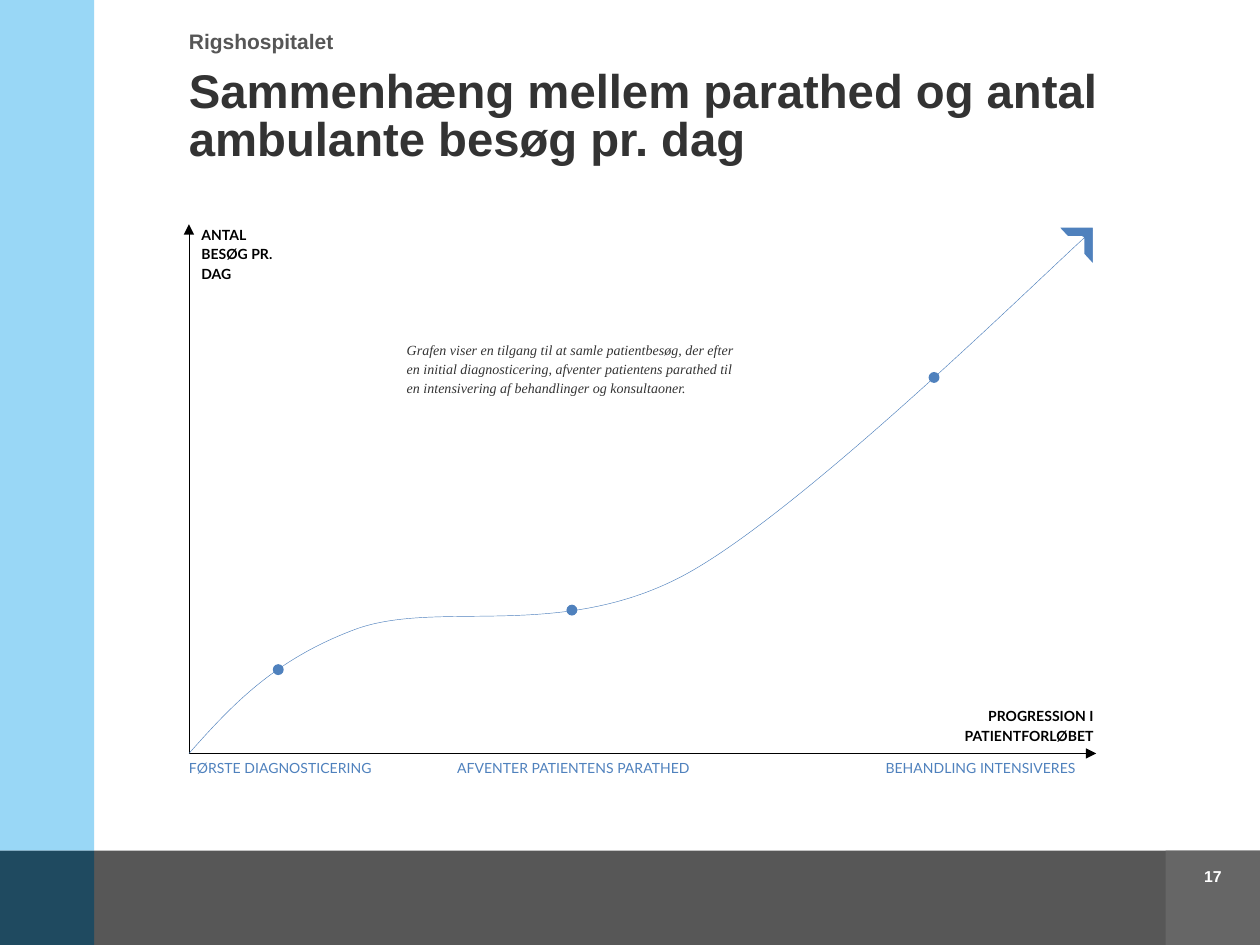
from lxml.etree import SubElement
from pptx import Presentation
from pptx.dml.color import RGBColor
from pptx.enum.shapes import MSO_SHAPE
from pptx.enum.text import MSO_ANCHOR, PP_ALIGN
from pptx.oxml.ns import qn
from pptx.util import Cm, Pt

COLORS = {
    "sky": "99D7F6", "navy": "1F4A60", "dark": "575757", "grey": "666666",
    "head": "565656", "ink": "333333", "blue": "4F81BD",
    "black": "000000", "white": "FFFFFF",
}
RGB = {name: RGBColor.from_string(code) for name, code in COLORS.items()}
LEFT, CENTER, RIGHT = PP_ALIGN.LEFT, PP_ALIGN.CENTER, PP_ALIGN.RIGHT

prs = Presentation()
prs.slide_width, prs.slide_height = Cm(25.4), Cm(19.05)
slide = prs.slides.add_slide(prs.slide_layouts[6])
shapes = slide.shapes


def add_box(kind, box, fill):
    shape = shapes.add_shape(kind, *map(Cm, box))
    shape.shadow.inherit = False
    shape.fill.solid()
    shape.fill.fore_color.rgb = RGB[fill]
    shape.line.fill.background()
    return shape


def add_text(box, text, font, size, color, bold=False, align=LEFT, space=1.0):
    label = shapes.add_textbox(*map(Cm, box))
    frame = label.text_frame
    frame.word_wrap = True
    frame.margin_left = frame.margin_right = 0
    frame.margin_top = frame.margin_bottom = 0
    para = frame.paragraphs[0]
    para.text = text
    para.alignment, para.line_spacing = align, space
    para.font.name, para.font.size = font, Pt(size)
    para.font.bold, para.font.color.rgb = bold, RGB[color]
    return frame


# Side and bottom bands
for box, fill in [
    ((1.9, 17.15, 23.5, 1.9), "dark"),
    ((23.5, 17.15, 1.9, 1.9), "grey"),
    ((0, 0, 1.9, 17.15), "sky"),
    ((0, 17.15, 1.9, 1.9), "navy"),
]:
    add_box(MSO_SHAPE.RECTANGLE, box, fill)

# Header, title and page number
add_text((3.81, 0.58, 6.5, 0.61), "Rigshospitalet", "Arial", 12, "head", True)
title = add_text((3.81, 1.32, 19.71, 2.03),
                 "Sammenhæng mellem parathed og antal ambulante besøg pr. dag",
                 "Arial", 27, "ink", True, space=0.85)
title.vertical_anchor = MSO_ANCHOR.BOTTOM
add_text((23.5, 17.48, 1.9, 0.41), "17", "Arial", 9, "white", True, CENTER)

# Corner at the end of the curve
corner = add_box(MSO_SHAPE.HALF_FRAME, (21.21, 4.57, 0.91, 0.84), "blue")
corner.rotation = 90
corner.line.color.rgb = RGB["white"]
corner.line.width = Pt(3)

# Axes and curve; the curve's points are Bézier controls
axis = [(3.81, 4.52), (3.81, 15.19), (22.1, 15.19)]
bends = [
    (3.81, 15.19),
    (4.67, 14.22), (5.54, 13.28), (7.21, 12.67),
    (8.89, 12.09), (11.33, 12.93), (13.82, 11.58),
    (16.28, 10.24), (21.18, 5.38), (22.02, 4.65),
]
lines = []
for points, color in [(axis, "black"), (bends, "blue")]:
    start, *rest = [(Cm(x), Cm(y)) for x, y in points]
    pen = shapes.build_freeform(*start)
    pen.add_line_segments(rest, close=False)
    line = pen.convert_to_shape()
    line.shadow.inherit = False
    line.fill.background()
    line.line.color.rgb = RGB[color]
    line.line.width = Pt(0.25)
    lines.append(line)
axes, curve = lines

# Arrowheads at both ends of the axes
stroke = axes.line._get_or_add_ln()
for tag in ("a:headEnd", "a:tailEnd"):
    SubElement(stroke, qn(tag), type="triangle")

# Turn each three line steps of the curve into one cubic step
track = next(curve._element.iter(qn("a:path")))
steps = track.findall(qn("a:lnTo"))
for i in range(0, len(steps), 3):
    cubic = SubElement(track, qn("a:cubicBezTo"))
    for step in steps[i:i + 3]:
        cubic.append(step[0])
        track.remove(step)

# Axis titles and phase labels
for box, text, color, bold, align in [
    ((4.06, 4.52, 1.5, 1.24), "ANTAL BESØG PR. DAG", "black", True, LEFT),
    ((18.75, 14.22, 3.3, 0.84), "PROGRESSION I PATIENTFORLØBET",
     "black", True, RIGHT),
    ((3.81, 15.27, 4.24, 0.41), "FØRSTE DIAGNOSTICERING", "blue", False, LEFT),
    ((8.81, 15.27, 5.51, 0.41), "AFVENTER PATIENTENS PARATHED",
     "blue", False, CENTER),
    ((16.18, 15.27, 5.51, 0.41), "BEHANDLING INTENSIVERES",
     "blue", False, RIGHT),
]:
    add_text(box, text, "Lato", 8, color, bold, align, 1.15)

# Dots on the curve
for x, y in [(5.5, 13.39), (11.42, 12.19), (18.72, 7.5)]:
    add_box(MSO_SHAPE.OVAL, (x, y, 0.22, 0.22), "blue")

# Note
note = add_box(MSO_SHAPE.RECTANGLE, (7.95, 6.71, 7.37, 2.03), "white")
note.text_frame.word_wrap = True
note.text_frame.vertical_anchor = MSO_ANCHOR.TOP
para = note.text_frame.paragraphs[0]
para.text = ("Grafen viser en tilgang til at samle patientbesøg, der efter "
             "en initial diagnosticering, afventer patientens parathed til "
             "en intensivering af behandlinger og konsultaoner.")
para.alignment, para.line_spacing = LEFT, 1.15
para.space_after = Pt(10)
para.font.name, para.font.size = "Times New Roman", Pt(8)
para.font.italic, para.font.color.rgb = True, RGB["ink"]

prs.save("out.pptx")
